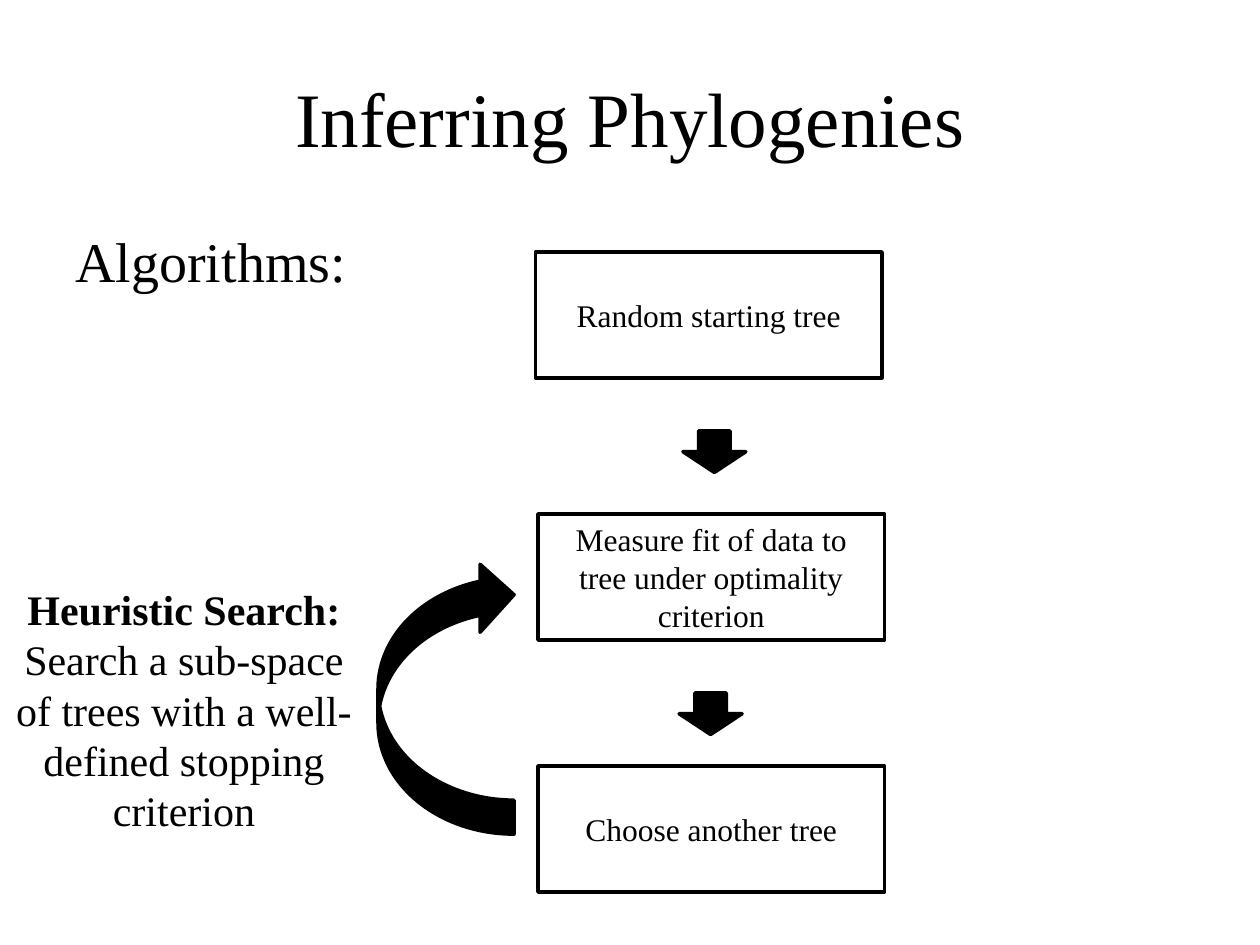
import pptx
import pptx.dml.color
import pptx.enum.shapes
import pptx.enum.text
import pptx.util

Inches = pptx.util.Inches
Pt = pptx.util.Pt
SHAPES = pptx.enum.shapes.MSO_SHAPE
ALIGN = pptx.enum.text.PP_ALIGN
ANCHOR = pptx.enum.text.MSO_ANCHOR

COLOURS = {"ink": "000000", "paper": "FFFFFF"}
FONT = "Times New Roman"


def colour(name):
    return pptx.dml.color.RGBColor.from_string(COLOURS[name])


def write(para, text, size=18, bold=False, align=ALIGN.CENTER, before=0):
    para.alignment = align
    para.space_before = Pt(before)
    span = para.add_run()
    span.text = text
    span.font.name = FONT
    span.font.size = Pt(size)
    span.font.bold = bold
    span.font.color.rgb = colour("ink")


class FlowSlide:
    def __init__(self, deck):
        self.page = deck.slides.add_slide(deck.slide_layouts[5])
        self.line_width = Pt(2)

    def title(self, text, left, top, width, height):
        holder = self.page.shapes.title
        holder.left, holder.top = Inches(left), Inches(top)
        holder.width, holder.height = Inches(width), Inches(height)
        holder.text_frame.vertical_anchor = ANCHOR.MIDDLE
        write(holder.text_frame.paragraphs[0], text, size=44)

    def text(self, lines, left, top, width, height):
        box = self.page.shapes.add_textbox(
            Inches(left), Inches(top), Inches(width), Inches(height))
        frame = box.text_frame
        frame.word_wrap = True
        for index, (text, style) in enumerate(lines):
            para = frame.add_paragraph() if index else frame.paragraphs[0]
            write(para, text, **style)
        return box

    def shape(self, kind, left, top, width, height, fill="ink"):
        shape = self.page.shapes.add_shape(
            kind, Inches(left), Inches(top), Inches(width), Inches(height))
        shape.shadow.inherit = False
        shape.fill.solid()
        shape.fill.fore_color.rgb = colour(fill)
        shape.line.color.rgb = colour("ink")
        shape.line.width = self.line_width
        return shape

    def step(self, text, left, top):
        box = self.shape(SHAPES.RECTANGLE, left, top, 2.75, 1, fill="paper")
        box.text_frame.word_wrap = True
        box.text_frame.vertical_anchor = ANCHOR.MIDDLE
        write(box.text_frame.paragraphs[0], text)

    def down_arrow(self, left, top):
        self.shape(SHAPES.DOWN_ARROW, left, top, 0.5, 0.33)

    def return_arrow(self, left, top, width, height):
        arrow = self.shape(SHAPES.CURVED_LEFT_ARROW, left, top, width, height)
        arrow.rotation = 180


def main():
    deck = pptx.Presentation()
    deck.slide_width, deck.slide_height = Inches(10), Inches(7.5)
    slide = FlowSlide(deck)

    slide.title("Inferring Phylogenies", 0.5, 0.3, 9, 1.25)
    heading = {"size": 32, "align": ALIGN.LEFT, "before": 6.4}
    slide.text([("Algorithms:", heading)], 0.5, 1.75, 9, 0.92)

    steps = [
        ("Random starting tree", 4.25, 2),
        ("Measure fit of data to tree under optimality criterion", 4.27, 4.08),
        ("Choose another tree", 4.27, 6.08),
    ]
    for text, left, top in steps:
        slide.step(text, left, top)
    for left, top in [(5.42, 3.42), (5.39, 5.5)]:
        slide.down_arrow(left, top)
    slide.return_arrow(3, 4.45, 1.08, 2.17)

    search = slide.text([
        ("Heuristic Search:", {"size": 24, "bold": True}),
        ("Search a sub-space of trees with a well-defined stopping criterion",
         {"size": 24}),
    ], 0, 4.58, 2.92, 2.12)
    search.text_frame.auto_size = pptx.enum.text.MSO_AUTO_SIZE.SHAPE_TO_FIT_TEXT

    deck.save("out.pptx")


if __name__ == "__main__":
    main()
